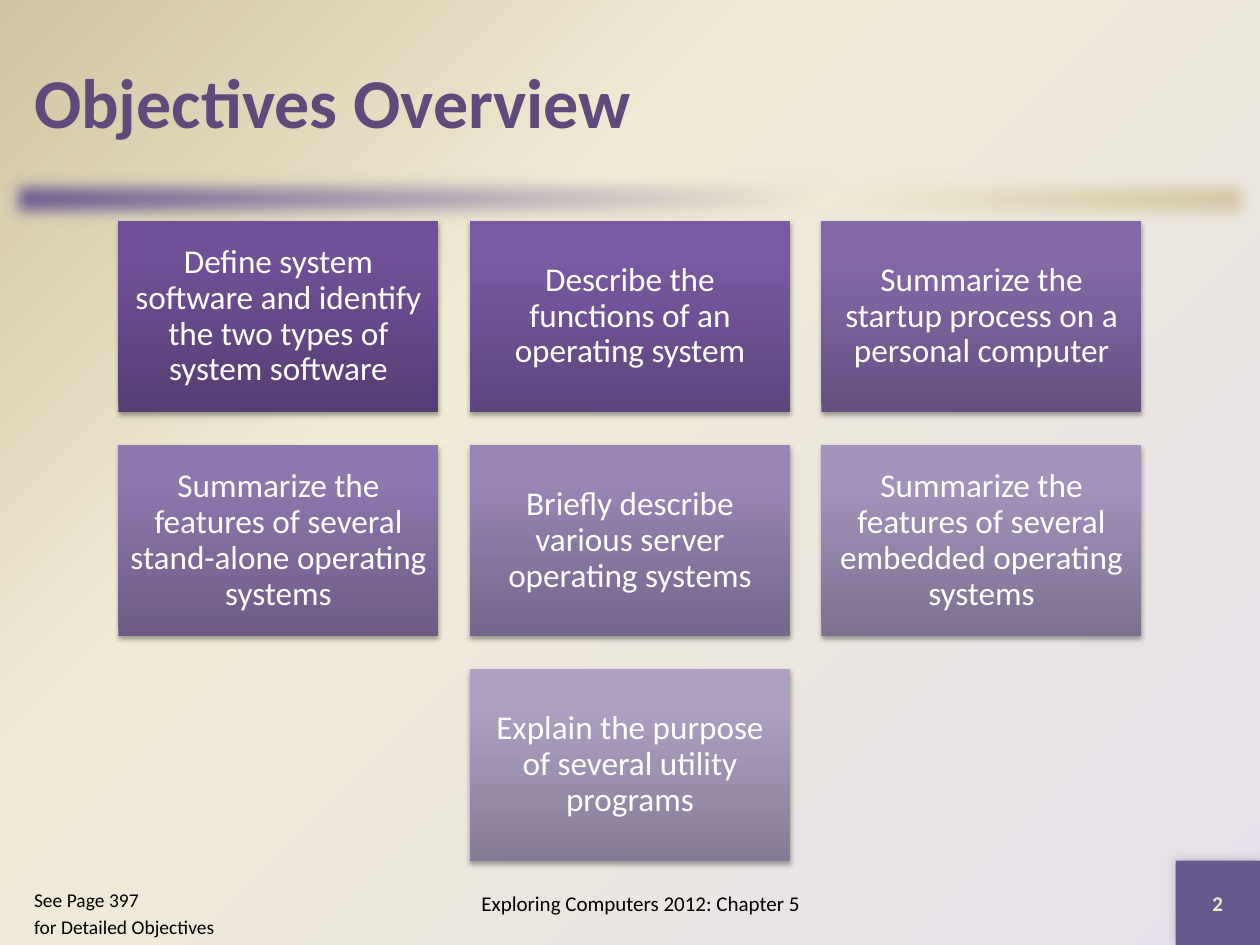
from dataclasses import dataclass

from lxml.etree import SubElement
from pptx import Presentation
from pptx.dml.color import RGBColor
from pptx.enum.shapes import MSO_SHAPE
from pptx.enum.text import MSO_ANCHOR, MSO_AUTO_SIZE, PP_ALIGN
from pptx.oxml import parse_xml
from pptx.oxml.ns import nsdecls, qn
from pptx.util import Inches, Pt

FONT = "Calibri"
PURPLE = "67588E"
CREAM = "F0EBD5"
TAN = "D1C39F"
CARD_WIDTH, CARD_HEIGHT, CARD_GAP = 2.54, 1.52, 0.25
GRID_LEFT, GRID_TOP = 0.94, 1.75


@dataclass
class Objective:
    wording: str
    column: int
    row: int
    colors: tuple[str, str, str]


@dataclass
class Shadow:
    opacity: int
    blur: float
    distance: float
    angle: int


OBJECTIVES = [
    Objective("Define system software and identify the two types of system software",
              0, 0, ("563D74", "705097", "704F99")),
    Objective("Describe the functions of an operating system",
              1, 0, ("5D457D", "7959A2", "7A58A4")),
    Objective("Summarize the startup process on a personal computer",
              2, 0, ("655081", "8468A8", "8467AA")),
    Objective("Summarize the features of several stand-alone operating systems",
              0, 1, ("6D5B86", "8E76AE", "8E75B0")),
    Objective("Briefly describe various server operating systems",
              1, 1, ("75668B", "9884B5", "9984B7")),
    Objective("Summarize the features of several embedded operating systems",
              2, 1, ("7D7090", "A392BC", "A492BD")),
    Objective("Explain the purpose of several utility programs",
              1, 2, ("867B96", "AE9FC3", "AE9FC4")),
]
CARD_SHADOW = Shadow(35, 3.1, 1.8, 90)
CORNER_SHADOW = Shadow(20, 6, 0, 225)


def rgb(color: str) -> RGBColor:
    return RGBColor.from_string(color)


def linear(angle: int) -> str:
    return f'<a:lin ang="{angle * 60000}" scaled="0"/>'


def set_gradient(owner, colors: tuple, middle: int, direction: str) -> None:
    stops = "".join(
        f'<a:gs pos="{position * 1000}"><a:srgbClr val="{color}"/></a:gs>'
        for position, color in zip((0, middle, 100), colors)
    )
    gradient = parse_xml(
        f'<a:gradFill {nsdecls("a")} rotWithShape="1">'
        f"<a:gsLst>{stops}</a:gsLst>{direction}</a:gradFill>"
    )
    owner.replace(owner.find(qn("a:noFill")), gradient)


def add_effect(shape, name: str, **settings: str):
    effects = shape.element.spPr.find(qn("a:effectLst"))
    return SubElement(effects, qn(name), settings)


def add_shadow(shape, shadow: Shadow) -> None:
    effect = add_effect(
        shape, "a:outerShdw", blurRad=str(Pt(shadow.blur)), dist=str(Pt(shadow.distance)),
        dir=str(shadow.angle * 60000), rotWithShape="0",
    )
    black = SubElement(effect, qn("a:srgbClr"), {"val": "000000"})
    SubElement(black, qn("a:alpha"), {"val": str(shadow.opacity * 1000)})


def place(shape, left: float, top: float, width: float, height: float) -> None:
    shape.left, shape.top = Inches(left), Inches(top)
    shape.width, shape.height = Inches(width), Inches(height)


def add_rectangle(slide, left: float, top: float, width: float, height: float):
    rectangle = slide.shapes.add_shape(
        MSO_SHAPE.RECTANGLE, Inches(left), Inches(top), Inches(width), Inches(height)
    )
    rectangle.shadow.inherit = False
    rectangle.fill.background()
    rectangle.line.fill.background()
    return rectangle


def write(shape, lines: list[str], size: float, color: str, bold: bool = False,
          align: PP_ALIGN = PP_ALIGN.CENTER, anchor: MSO_ANCHOR = MSO_ANCHOR.MIDDLE):
    frame = shape.text_frame
    frame.word_wrap = True
    frame.auto_size = MSO_AUTO_SIZE.NONE
    frame.vertical_anchor = anchor
    for index, line in enumerate(lines):
        paragraph = frame.add_paragraph() if index else frame.paragraphs[0]
        paragraph.alignment = align
        run = paragraph.add_run()
        run.text = line
        run.font.name = FONT
        run.font.size = Pt(size)
        run.font.bold = bold
        run.font.color.rgb = rgb(color)
    return frame


def add_card(slide, objective: Objective) -> None:
    card = add_rectangle(
        slide,
        GRID_LEFT + objective.column * (CARD_WIDTH + CARD_GAP),
        GRID_TOP + objective.row * (CARD_HEIGHT + CARD_GAP + 0.01),
        CARD_WIDTH, CARD_HEIGHT,
    )
    set_gradient(card.element.spPr, objective.colors, 80, linear(270))
    add_shadow(card, CARD_SHADOW)
    frame = write(card, [objective.wording], 19, "FFFFFF")
    frame.margin_left = frame.margin_right = Inches(0.08)
    frame.margin_top = frame.margin_bottom = Inches(0.08)
    frame.paragraphs[0].line_spacing = 0.9


def add_page_reference(reference) -> None:
    place(reference, 0.17, 7, 1.83, 0.5)
    frame = write(reference, ["See Page 397", "for Detailed Objectives"], 11.1, "000000",
                  align=PP_ALIGN.LEFT, anchor=MSO_ANCHOR.TOP)
    for paragraph in frame.paragraphs:
        paragraph.space_before = Pt(2.2)
        properties = paragraph._p.get_or_add_pPr()
        properties.set("marL", str(Inches(0.38)))
        properties.set("indent", str(Inches(-0.38)))
        SubElement(properties, qn("a:buNone"))


def main() -> None:
    presentation = Presentation()
    presentation.slide_width, presentation.slide_height = Inches(10), Inches(7.5)
    slide = presentation.slides.add_slide(presentation.slide_layouts[1])

    slide.background.fill.background()
    set_gradient(
        slide.element.find(".//" + qn("p:bgPr")), ("E6E0EC", CREAM, TAN), 65,
        '<a:path path="circle"><a:fillToRect l="100000" t="100000"/></a:path>',
    )

    divider = add_rectangle(slide, 0, 1.33, 10, 0.5)
    set_gradient(divider.element.spPr, (PURPLE, CREAM, TAN), 65, linear(45))
    add_effect(divider, "a:softEdge", rad=str(Pt(10)))

    page_number = add_rectangle(slide, 9.33, 6.83, 0.67, 0.67)
    page_number.fill.solid()
    page_number.fill.fore_color.rgb = rgb(PURPLE)
    add_shadow(page_number, CORNER_SHADOW)
    write(page_number, ["2"], 12, "EEEBCA", bold=True)

    title = slide.shapes.title
    place(title, 0.17, 0.17, 9.67, 1.25)
    write(title, ["Objectives Overview"], 40, "604A7B", bold=True, align=PP_ALIGN.LEFT)

    for objective in OBJECTIVES:
        add_card(slide, objective)

    footer = slide.shapes.add_textbox(Inches(3), Inches(6.92), Inches(4.17), Inches(0.5))
    write(footer, ["Exploring Computers 2012: Chapter 5"], 12, "000000")

    add_page_reference(slide.placeholders[1])
    presentation.save("out.pptx")


if __name__ == "__main__":
    main()
